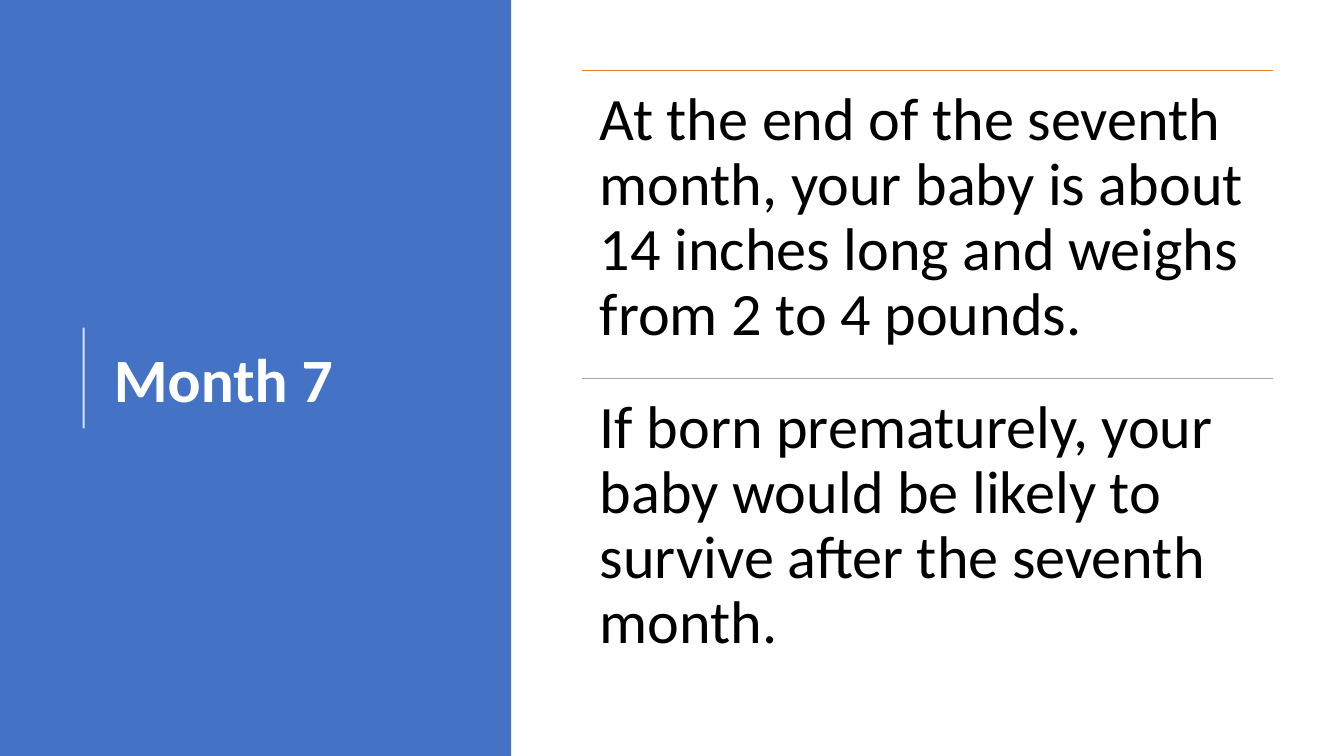
"""Build the Month 7 slide with a title panel and two ruled statements."""
from lxml.etree import SubElement
from pptx import Presentation
from pptx.dml.color import RGBColor
from pptx.enum.shapes import MSO_CONNECTOR, MSO_SHAPE
from pptx.enum.text import MSO_ANCHOR
from pptx.oxml.ns import qn
from pptx.util import Inches, Pt

BLUE = RGBColor(0x44, 0x72, 0xC4)
ORANGE = RGBColor(0xED, 0x7D, 0x31)
GRAY = RGBColor(0xA5, 0xA5, 0xA5)
WHITE = RGBColor(0xFF, 0xFF, 0xFF)
BLACK = RGBColor(0x00, 0x00, 0x00)

TITLE = "Month 7"
STATEMENTS = [
    ("At the end of the seventh month, your baby is about 14 inches long "
     "and weighs from 2 to 4 pounds.", ORANGE),
    ("If born prematurely, your baby would be likely to survive after the "
     "seventh month.", GRAY),
]
LEFT, TOP, WIDTH, ROW_HEIGHT = 5.77, 0.7, 6.86, 3.05


def add_line(slide, start, end, color, weight, opacity=100):
    """Draw a straight line without a shadow."""
    line = slide.shapes.add_connector(
        MSO_CONNECTOR.STRAIGHT, *map(Inches, start + end))
    line.line.color.rgb = color
    line.line.width = Pt(weight)
    properties = line._element.spPr
    SubElement(properties, qn("a:effectLst"))
    if opacity < 100:
        color_element = next(properties.iter(qn("a:srgbClr")))
        SubElement(color_element, qn("a:alpha"), val=str(opacity * 1000))


def add_text(slide, box, text, size, color, anchor, bold=False, inset=None):
    """Add a wrapped text box holding one run."""
    frame = slide.shapes.add_textbox(*map(Inches, box)).text_frame
    frame.word_wrap = True
    frame.vertical_anchor = anchor
    if inset is not None:
        frame.margin_left = frame.margin_right = Inches(inset)
        frame.margin_top = frame.margin_bottom = Inches(inset)
    paragraph = frame.paragraphs[0]
    paragraph.line_spacing = 0.9
    run = paragraph.add_run()
    run.text = text
    run.font.name = "Calibri"
    run.font.size = Pt(size)
    run.font.bold = bold
    run.font.color.rgb = color


def main():
    """Assemble and save the slide."""
    presentation = Presentation()
    presentation.slide_width = Inches(13.33)
    presentation.slide_height = Inches(7.5)
    slide = presentation.slides.add_slide(presentation.slide_layouts[6])

    panel = slide.shapes.add_shape(
        MSO_SHAPE.RECTANGLE, 0, 0, Inches(5.07), Inches(7.5))
    panel.shadow.inherit = False
    panel.fill.solid()
    panel.fill.fore_color.rgb = BLUE
    panel.line.fill.background()

    add_text(slide, (1.03, 0.78, 3.69, 6.02), TITLE, 44, WHITE,
             MSO_ANCHOR.MIDDLE, bold=True)
    add_line(slide, (0.83, 4.25), (0.83, 3.25), WHITE, 1.5, opacity=80)

    for index, (statement, rule_color) in enumerate(STATEMENTS):
        top = TOP + index * ROW_HEIGHT
        add_line(slide, (LEFT, top), (LEFT + WIDTH, top), rule_color, 0.5)
        add_text(slide, (LEFT, top, WIDTH, ROW_HEIGHT), statement, 43, BLACK,
                 MSO_ANCHOR.TOP, inset=0.18)

    presentation.save("out.pptx")


if __name__ == "__main__":
    main()
